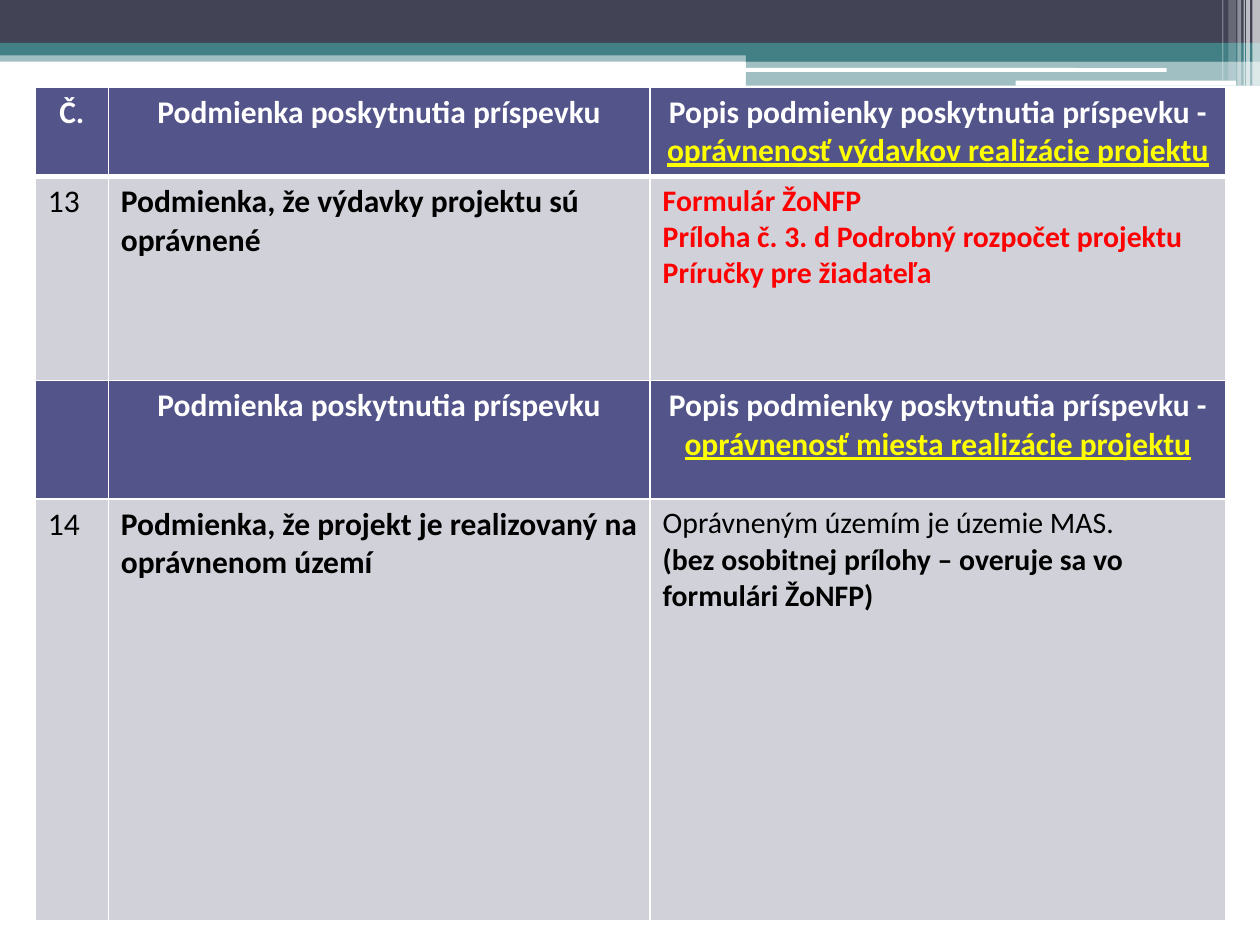
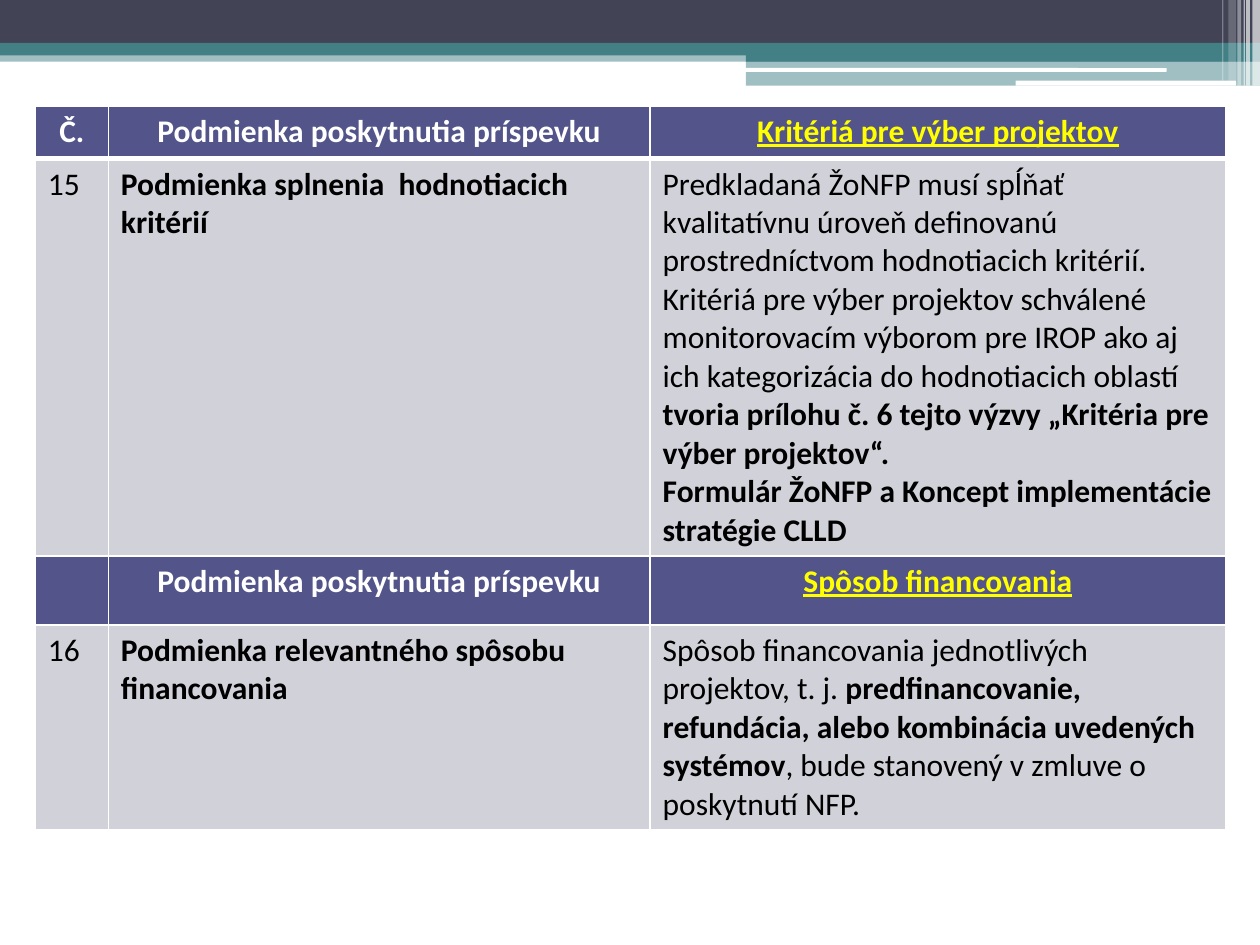
from lxml.etree import SubElement
from pptx import Presentation
from pptx.dml.color import RGBColor
from pptx.enum.shapes import MSO_SHAPE as Shape
from pptx.enum.text import PP_ALIGN as Align
from pptx.oxml.ns import qn
from pptx.util import Inches, Pt

# Shared look
FONT = "Calibri"
DARK, TEAL, WHITE = "424456", "438086", "FFFFFF"
HEADER_FILL, BODY_FILL = "53548A", "D1D1DA"
BLACK, RED, YELLOW = "000000", "FF0000", "FFFF00"
COLUMN_WIDTHS = [0.58, 4.3, 4.57]
TABLE_LEFT = 0.28

# Left, top, width, height, colour, opacity in percent
BANDS = [
    (0, 0.4, 10, 0.09, TEAL, 50),
    (0, 0, 10, 0.34, DARK, 100),
    (0, 0.34, 10, 0.1, TEAL, 100),
    (5.92, 0.39, 4.08, 0.1, TEAL, 100),
    (5.92, 0.48, 4.08, 0.2, TEAL, 50),
]
ROUNDED_LINES = [
    (5.91, 0.54, 3.35, 0.03, WHITE, 100),
    (8.06, 0.64, 1.75, 0.04, WHITE, 100),
]
# Left, width, height, opacity of the stripes at the right edge
STRIPES = [
    (9.94, 0.06, 0.68, 65),
    (9.89, 0.03, 0.68, 65),
    (9.87, 0.01, 0.68, 60),
    (9.82, 0.03, 0.68, 40),
    (9.75, 0.06, 0.64, 20),
    (9.7, 0.01, 0.64, 30),
]

# Text formats
HEADING = {"size": Pt(18), "bold": True, "color": WHITE}
ACCENT = {**HEADING, "color": YELLOW, "underline": True}
PLAIN = {"size": Pt(18), "bold": False, "color": BLACK}
BOLD = {**PLAIN, "bold": True}
SMALL = {**PLAIN, "size": Pt(17)}
SMALL_BOLD = {**SMALL, "bold": True}
SMALL_RED = {**SMALL_BOLD, "color": RED}


def rgb(value):
    return RGBColor.from_string(value)


def add_bar(slide, kind, left, top, width, height, color, opacity):
    shape = slide.shapes.add_shape(
        kind, Inches(left), Inches(top), Inches(width), Inches(height))
    shape.shadow.inherit = False
    shape.line.fill.background()
    shape.fill.solid()
    shape.fill.fore_color.rgb = rgb(color)
    if opacity < 100:
        color_element = shape.fill._xPr.find(".//" + qn("a:srgbClr"))
        SubElement(color_element, qn("a:alpha"), val=str(opacity * 1000))


def add_top_bands(slide):
    for band in BANDS:
        add_bar(slide, Shape.RECTANGLE, *band)
    for line in ROUNDED_LINES:
        add_bar(slide, Shape.ROUNDED_RECTANGLE, *line)
    for left, width, height, opacity in STRIPES:
        add_bar(slide, Shape.RECTANGLE, left, 0, width, height, WHITE, opacity)


def set_borders(cell, top=1, bottom=1):
    properties = cell._tc.get_or_add_tcPr()
    for side, points in {"L": 1, "R": 1, "T": top, "B": bottom}.items():
        line = SubElement(properties, qn(f"a:ln{side}"), w=str(Pt(points)))
        fill = SubElement(line, qn("a:solidFill"))
        SubElement(fill, qn("a:srgbClr"), val=WHITE)


def write_cell(cell, paragraphs, align):
    """Each paragraph is a list of (text, format) runs."""
    frame = cell.text_frame
    for index, runs in enumerate(paragraphs):
        paragraph = frame.add_paragraph() if index else frame.paragraphs[0]
        paragraph.alignment = align
        for text, text_format in runs:
            run = paragraph.add_run()
            run.text = text
            run.font.name = FONT
            for name, value in text_format.items():
                if name == "color":
                    run.font.color.rgb = rgb(value)
                else:
                    setattr(run.font, name, value)


def add_condition_table(slide, top, row_heights, rows):
    """Even rows are headings, odd rows hold the conditions."""
    table = slide.shapes.add_table(
        len(rows), len(COLUMN_WIDTHS), Inches(TABLE_LEFT), Inches(top),
        Inches(sum(COLUMN_WIDTHS)), Inches(sum(row_heights))).table
    table.first_row = table.horz_banding = False
    for column, width in zip(table.columns, COLUMN_WIDTHS):
        column.width = Inches(width)
    for row_index, (height, contents) in enumerate(zip(row_heights, rows)):
        table.rows[row_index].height = Inches(height)
        is_heading = row_index % 2 == 0
        for column_index, paragraphs in enumerate(contents):
            cell = table.cell(row_index, column_index)
            set_borders(cell, top=3 if row_index == 1 else 1,
                        bottom=3 if row_index == 0 else 1)
            cell.fill.solid()
            cell.fill.fore_color.rgb = rgb(HEADER_FILL if is_heading else BODY_FILL)
            write_cell(cell, paragraphs, Align.CENTER if is_heading else Align.LEFT)


def heading_row(number, *description):
    return [[[(number, HEADING)]] if number else [],
            [[("Podmienka poskytnutia príspevku", HEADING)]],
            [list(description)]]


def condition_row(number, condition, *description):
    return [[[(number, PLAIN)]], [[(condition, BOLD)]], description]


DESCRIPTION = ("Popis podmienky poskytnutia príspevku - ", HEADING)

ELIGIBILITY_ROWS = [
    heading_row("Č.", DESCRIPTION,
                ("oprávnenosť výdavkov realizácie projektu", ACCENT)),
    condition_row(
        "13", "Podmienka, že výdavky projektu sú oprávnené",
        [("Formulár ŽoNFP", SMALL_RED)],
        [("Príloha č. 3. d Podrobný rozpočet projektu Príručky pre žiadateľa",
          SMALL_RED)]),
    heading_row("", DESCRIPTION,
                ("oprávnenosť miesta realizácie projektu", ACCENT)),
    condition_row(
        "14", "Podmienka, že projekt je realizovaný na oprávnenom území",
        [("Oprávneným územím je územie MAS.", SMALL)],
        [("(bez osobitnej prílohy – overuje sa vo formulári ŽoNFP)", SMALL_BOLD)]),
]

SELECTION_ROWS = [
    heading_row("Č.", ("Kritériá pre výber projektov", ACCENT)),
    condition_row(
        "15", "Podmienka splnenia  hodnotiacich kritérií",
        [("Predkladaná ŽoNFP musí spĺňať kvalitatívnu úroveň definovanú "
          "prostredníctvom hodnotiacich kritérií. Kritériá pre výber projektov "
          "schválené monitorovacím výborom pre IROP ako aj ich kategorizácia "
          "do hodnotiacich oblastí ", PLAIN),
         ("tvoria prílohu č. 6 tejto výzvy „Kritéria pre výber projektov“.", BOLD)],
        [("Formulár ŽoNFP a Koncept implementácie stratégie CLLD", BOLD)]),
    heading_row("", ("Spôsob financovania", ACCENT)),
    condition_row(
        "16", "Podmienka relevantného spôsobu financovania",
        [("Spôsob financovania jednotlivých projektov, t. j. ", PLAIN),
         ("predfinancovanie, refundácia, alebo kombinácia uvedených systémov", BOLD),
         (", bude stanovený v zmluve o poskytnutí NFP.", PLAIN)]),
]

# Table top, row heights, rows
SLIDES = [
    (0.69, [0.7, 1.62, 0.94, 3.35], ELIGIBILITY_ROWS),
    (0.84, [0.42, 3.13, 0.55, 1.62], SELECTION_ROWS),
]


def main():
    presentation = Presentation()
    presentation.slide_width = Inches(10)
    presentation.slide_height = Inches(7.5)
    blank_layout = presentation.slide_layouts[6]
    for top, row_heights, rows in SLIDES:
        slide = presentation.slides.add_slide(blank_layout)
        add_top_bands(slide)
        add_condition_table(slide, top, row_heights, rows)
    presentation.save("out.pptx")


if __name__ == "__main__":
    main()
